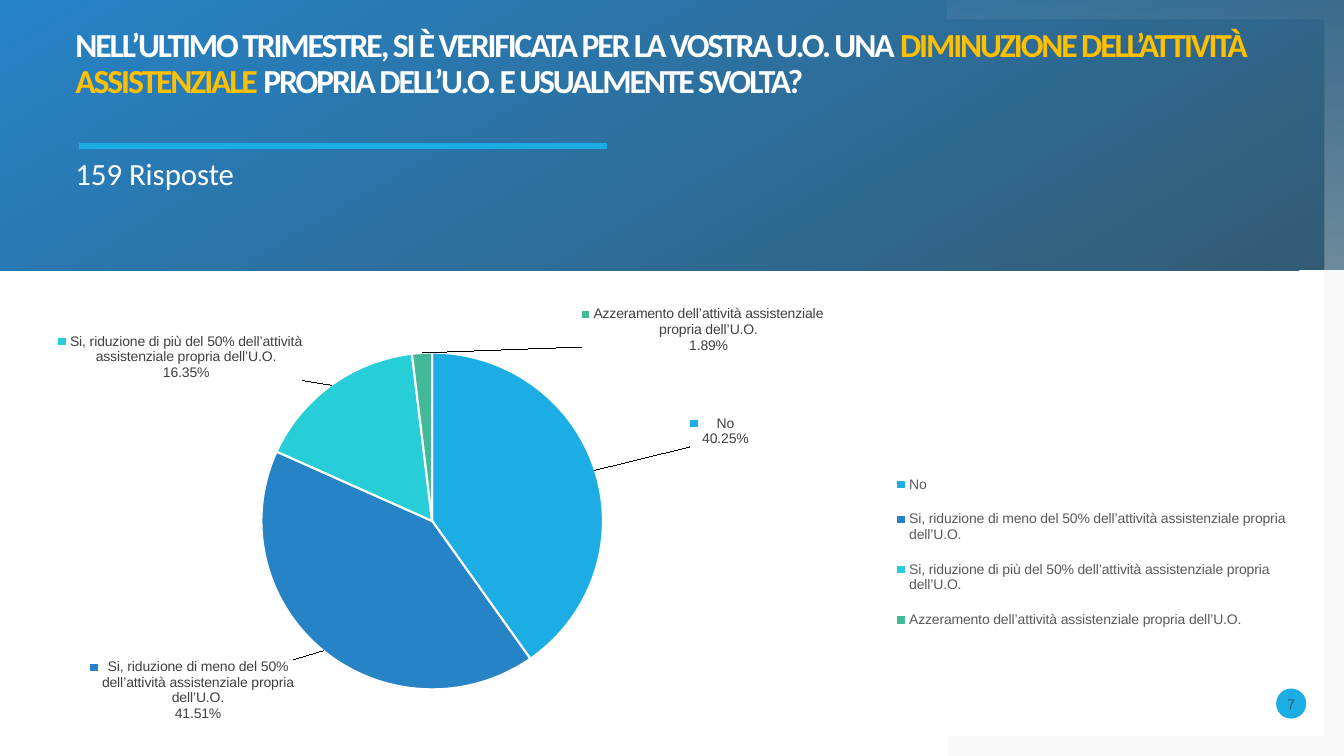
from lxml import etree
from pptx import Presentation
from pptx.chart.data import CategoryChartData
from pptx.dml.color import RGBColor
from pptx.enum.chart import XL_CHART_TYPE, XL_LEGEND_POSITION
from pptx.enum.shapes import MSO_CONNECTOR, MSO_SHAPE
from pptx.enum.text import MSO_ANCHOR, MSO_AUTO_SIZE, PP_ALIGN
from pptx.oxml import parse_xml
from pptx.oxml.ns import nsdecls, qn
from pptx.util import Cm, Pt

WHITE = RGBColor(0xFF, 0xFF, 0xFF)
NAVY = RGBColor(0x33, 0x5B, 0x74)
BLUE = RGBColor(0x26, 0x83, 0xC6)
SKY = RGBColor(0x1C, 0xAD, 0xE4)
TURQUOISE = RGBColor(0x27, 0xCE, 0xD7)
GREEN = RGBColor(0x42, 0xBA, 0x97)
GOLD = RGBColor(0xFF, 0xC0, 0x00)
GREY = RGBColor(0x80, 0x80, 0x80)
LEGEND_GREY = RGBColor(0x59, 0x59, 0x59)
LABEL_GREY = RGBColor(0x40, 0x40, 0x40)

SLIDE_WIDTH, SLIDE_HEIGHT = Cm(33.87), Cm(19.05)
BANNER_HEIGHT = Cm(6.81)

TITLE_RUNS = [
    ("NELL’ULTIMO TRIMESTRE, SI È VERIFICATA PER LA VOSTRA U.O. UNA ", WHITE),
    ("DIMINUZIONE DELL’ATTIVITÀ ASSISTENZIALE ", GOLD),
    ("PROPRIA DELL’U.O. E USUALMENTE SVOLTA?", WHITE),
]
# Answer, share, slice colour, label shift as a fraction of the chart
ANSWERS = [
    ("No", 40.25, SKY, (0.07, -0.05)),
    ("Si, riduzione di meno del 50% dell’attività assistenziale propria dell’U.O.",
     41.51, BLUE, (-0.02, 0.01)),
    ("Si, riduzione di più del 50% dell’attività assistenziale propria dell’U.O.",
     16.35, TURQUOISE, (-0.02, 0)),
    ("Azzeramento dell’attività assistenziale propria dell’U.O.",
     1.89, GREEN, (0.22, 0)),
]


def set_alpha(color_element, percent):
    etree.SubElement(color_element, qn("a:alpha"), val=str(percent * 1000))


def fill_gradient(shape, colors, angle):
    shape.fill.gradient()
    shape.fill.gradient_angle = angle
    for stop, color, position in zip(shape.fill.gradient_stops, colors, (0, 1)):
        stop.color.rgb = color
        stop.position = position


def make_plain(shape):
    shape.shadow.inherit = False
    shape.line.fill.background()


def add_corner_frame(slide, left, right, outer, far, thickness):
    """Draw an L along the outer edge and down or up the right side to far."""
    inner = outer + thickness if far > outer else outer - thickness
    builder = slide.shapes.build_freeform(left, outer)
    builder.add_line_segments([
        (right, outer), (right, far), (right - thickness, far),
        (right - thickness, inner), (left, inner)])
    frame = builder.convert_to_shape()
    make_plain(frame)
    return frame


def add_background(slide, width, height, banner_height):
    frame_left, thickness = Cm(23.88), Cm(0.5)
    lower_frame = add_corner_frame(
        slide, frame_left, width, height, banner_height, thickness)
    lower_frame.fill.solid()
    lower_frame.fill.fore_color.rgb = GREY
    set_alpha(lower_frame._element.spPr.find(".//" + qn("a:srgbClr")), 5)

    banner = slide.shapes.add_shape(MSO_SHAPE.RECTANGLE, 0, 0, width, banner_height)
    make_plain(banner)
    fill_gradient(banner, (NAVY, BLUE), 120)

    upper_frame = add_corner_frame(
        slide, frame_left, width, 0, banner_height, thickness)
    fill_gradient(upper_frame, (WHITE, WHITE), 270)
    stops = upper_frame._element.spPr.iter(qn("a:srgbClr"))
    for color, percent in zip(stops, (5, 30)):
        set_alpha(color, percent)


def place_text(slide, placeholder, left, top, width, height):
    """Bring a placeholder to the front and return its emptied paragraph."""
    slide.shapes._spTree.append(placeholder._element)
    placeholder.left, placeholder.top = left, top
    placeholder.width, placeholder.height = width, height
    frame = placeholder.text_frame
    frame.word_wrap = True
    frame.auto_size = MSO_AUTO_SIZE.NONE
    frame.vertical_anchor = MSO_ANCHOR.TOP
    frame.margin_left = frame.margin_right = 0
    frame.margin_top = frame.margin_bottom = 0
    paragraph = frame.paragraphs[0]
    paragraph.alignment = PP_ALIGN.LEFT
    paragraph.space_before = Pt(0)
    paragraph.font.name = "Calibri"
    return paragraph


def add_heading(slide, left, top, width):
    question = place_text(slide, slide.shapes.title, left, top, width, Cm(2.57))
    question.line_spacing = 0.9
    question.font.size = Pt(24)
    question.font.bold = True
    for text, color in TITLE_RUNS:
        run = question.add_run()
        run.text = text
        run.font.color.rgb = color
        run.font._element.set("spc", "-150")

    responses = place_text(
        slide, slide.placeholders[1], left, top + Cm(3.2), Cm(21), Cm(1))
    responses.text = "159 Risposte"
    responses.space_after = Pt(10)
    responses.font.size = Pt(22)
    responses.font.color.rgb = WHITE

    rule_left, rule_top = left + Cm(0.1), top + Cm(2.97)
    rule = slide.shapes.add_connector(
        MSO_CONNECTOR.STRAIGHT, rule_left, rule_top, rule_left + Cm(13.3), rule_top)
    rule.line.color.rgb = SKY
    rule.line.width = Pt(4.32)
    etree.SubElement(rule._element.spPr, qn("a:effectLst"))


def add_page_number(slide, left, top, diameter):
    badge = slide.shapes.add_shape(MSO_SHAPE.OVAL, left, top, diameter, diameter)
    make_plain(badge)
    badge.fill.solid()
    badge.fill.fore_color.rgb = SKY
    frame = badge.text_frame
    frame.margin_left = frame.margin_right = 0
    frame.margin_top = frame.margin_bottom = 0
    frame.vertical_anchor = MSO_ANCHOR.MIDDLE
    number = frame.paragraphs[0]
    number.text = "7"
    number.alignment = PP_ALIGN.CENTER
    number.font.name = "Arial"
    number.font.size = Pt(10)
    number.font.color.rgb = NAVY


def manual_layout(**settings):
    values = "".join(f'<c:{key} val="{value}"/>' for key, value in settings.items())
    return f'<c:layout {nsdecls("c")}><c:manualLayout>{values}</c:manualLayout></c:layout>'


def slice_labels():
    """Return the data label XML: legend key, answer and percentage."""
    look = (
        '<c:numFmt formatCode="0.00%" sourceLinked="0"/>'
        '<c:spPr><a:noFill/><a:ln><a:noFill/></a:ln></c:spPr>'
        '<c:txPr><a:bodyPr/><a:p><a:pPr><a:defRPr sz="1000" b="0">'
        f'<a:solidFill><a:srgbClr val="{LABEL_GREY}"/></a:solidFill>'
        '<a:latin typeface="Arial"/></a:defRPr></a:pPr></a:p></c:txPr>'
        '<c:dLblPos val="outEnd"/><c:showLegendKey val="1"/><c:showVal val="0"/>'
        '<c:showCatName val="1"/><c:showSerName val="0"/><c:showPercent val="1"/>'
        '<c:showBubbleSize val="0"/><c:separator>\n</c:separator>')
    labels = "".join(
        f'<c:dLbl><c:idx val="{index}"/>{manual_layout(x=x, y=y)}{look}</c:dLbl>'
        for index, (_, _, _, (x, y)) in enumerate(ANSWERS))
    return (f'<c:dLbls {nsdecls("c", "a")}>{labels}{look}'
            '<c:showLeaderLines val="1"/></c:dLbls>')


def add_answer_pie(slide, left, top, width, height):
    data = CategoryChartData()
    data.categories = [answer for answer, *_ in ANSWERS]
    data.add_series("Series 1", [share for _, share, *_ in ANSWERS])
    chart = slide.shapes.add_chart(
        XL_CHART_TYPE.PIE, left, top, width, height, data).chart
    chart.has_title = False
    chart.font.name = "Arial"
    chart.font.size = Pt(10)

    pie = chart.plots[0]
    pie.vary_by_categories = True
    shares = pie.series[0]
    for index, (_, _, color, _) in enumerate(ANSWERS):
        portion = shares.points[index].format
        portion.fill.solid()
        portion.fill.fore_color.rgb = color
        portion.line.color.rgb = WHITE
        portion.line.width = Pt(1.5)
    shares._element.find(qn("c:cat")).addprevious(parse_xml(slice_labels()))

    chart.has_legend = True
    legend = chart.legend
    legend.position = XL_LEGEND_POSITION.RIGHT
    legend.include_in_layout = False
    legend.font.name = "Arial"
    legend.font.size = Pt(10)
    legend.font.color.rgb = LEGEND_GREY
    legend._element.find(qn("c:legendPos")).addnext(parse_xml(manual_layout(
        xMode="edge", yMode="edge", x=0.66, y=0.35, w=0.33, h=0.44)))

    plot_area = pie._element.getparent()
    for layout in plot_area.findall(qn("c:layout")):
        plot_area.remove(layout)
    plot_area.insert(0, parse_xml(manual_layout(
        layoutTarget="inner", xMode="edge", yMode="edge",
        x=0.055, y=0.107, w=0.507, h=0.781)))


def main():
    presentation = Presentation()
    presentation.slide_width, presentation.slide_height = SLIDE_WIDTH, SLIDE_HEIGHT
    slide = presentation.slides.add_slide(presentation.slide_layouts[2])
    add_background(slide, SLIDE_WIDTH, SLIDE_HEIGHT, BANNER_HEIGHT)
    add_heading(slide, Cm(1.9), Cm(0.71), Cm(29.64))
    add_page_number(slide, Cm(32.16), Cm(17.35), Cm(0.76))
    add_answer_pie(slide, Cm(0.97), Cm(7.57), Cm(32.16), Cm(11.02))
    presentation.save("out.pptx")


if __name__ == "__main__":
    main()
